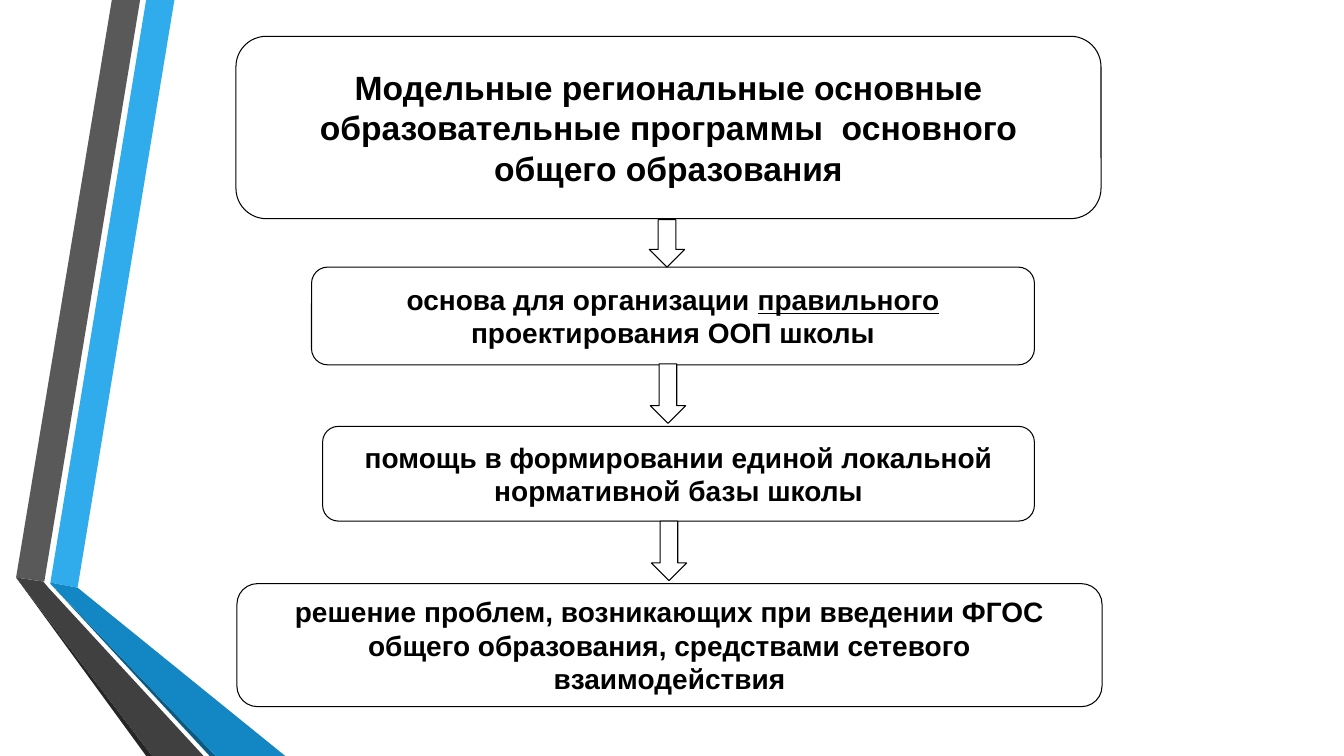
from pptx import Presentation
from pptx.dml.color import RGBColor
from pptx.enum.shapes import MSO_SHAPE
from pptx.enum.text import MSO_ANCHOR, PP_ALIGN
from pptx.util import Inches, Pt

RIBBONS = [
    ("30ACEC", [(0.5, 5.78), (0.77, 5.83), (1.73, 0), (1.45, 0)]),
    ("595959", [(1.39, 0), (1.11, 0), (0.16, 5.73), (0.44, 5.77)]),
    ("262626", [(0.16, 5.73), (1.45, 7.5), (1.51, 7.5)]),
    ("0C5A82", [(0.5, 5.79), (2.08, 7.5), (2.14, 7.5)]),
    ("1287C3", [(0.5, 5.79), (2.14, 7.5), (2.83, 7.5), (0.77, 5.83), (0.5, 5.78)]),
    ("404040", [(2.02, 7.5), (0.48, 5.83), (0.43, 5.77), (0.16, 5.73), (1.51, 7.5)]),
]

BOXES = [
    ((2.34, 0.36, 8.58, 1.81), 24,
     [("Модельные региональные основные образовательные программы  основного общего образования", False)]),
    ((3.09, 2.65, 7.17, 0.97), 20,
     [("основа для организации ", False), ("правильного ", True),
      ("проектирования ООП школы", False)]),
    ((3.2, 4.23, 7.06, 0.94), 20,
     [("помощь в формировании единой локальной нормативной базы школы", False)]),
    ((2.35, 5.79, 8.58, 1.22), 20,
     [("решение проблем, возникающих при введении ФГОС общего образования, "
       "средствами сетевого взаимодействия", False)]),
]

ARROWS = [(6.44, 2.18, 0.35, 0.47), (6.45, 3.61, 0.35, 0.59), (6.46, 5.17, 0.35, 0.59)]


def color(value):
    return RGBColor.from_string(value)


def add_ribbon(page, fill, points):
    corners = [(Inches(x), Inches(y)) for x, y in points]
    builder = page.shapes.build_freeform(*corners[0])
    builder.add_line_segments(corners[1:], close=True)
    ribbon = builder.convert_to_shape()
    ribbon.shadow.inherit = False
    ribbon.fill.solid()
    ribbon.fill.fore_color.rgb = color(fill)
    ribbon.line.fill.background()


def add_outlined(page, kind, place):
    shape = page.shapes.add_shape(kind, *map(Inches, place))
    shape.shadow.inherit = False
    shape.fill.solid()
    shape.fill.fore_color.rgb = color("FFFFFF")
    shape.line.color.rgb = color("000000")
    shape.line.width = Pt(0.75)
    return shape


def add_box(page, place, size, spans):
    box = add_outlined(page, MSO_SHAPE.ROUNDED_RECTANGLE, place)
    frame = box.text_frame
    frame.word_wrap = True
    frame.vertical_anchor = MSO_ANCHOR.MIDDLE
    para = frame.paragraphs[0]
    para.alignment = PP_ALIGN.CENTER
    for text, underlined in spans:
        span = para.add_run()
        span.text = text
        span.font.name = "Arial"
        span.font.size = Pt(size)
        span.font.bold = True
        span.font.underline = underlined
        span.font.color.rgb = color("000000")


def main():
    deck = Presentation()
    deck.slide_width, deck.slide_height = Inches(13.33), Inches(7.5)
    page = deck.slides.add_slide(deck.slide_layouts[6])
    for fill, points in RIBBONS:
        add_ribbon(page, fill, points)
    for place, size, spans in BOXES:
        add_box(page, place, size, spans)
    for place in ARROWS:
        add_outlined(page, MSO_SHAPE.DOWN_ARROW, place)
    deck.save("out.pptx")


if __name__ == "__main__":
    main()
